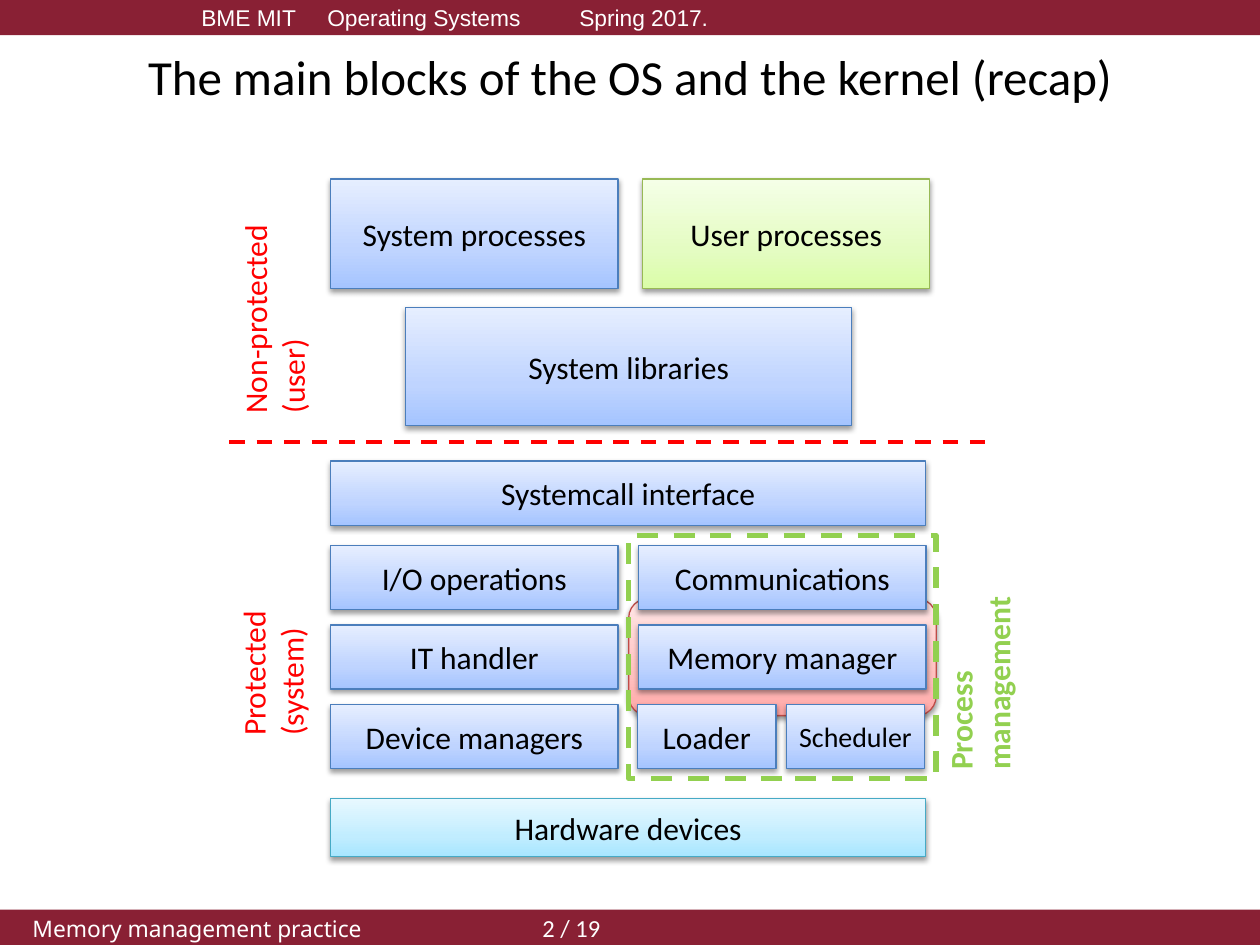
from copy import deepcopy
from dataclasses import dataclass

from lxml import etree
from pptx import Presentation
from pptx import util as u
from pptx.dml.color import RGBColor
from pptx.enum import dml, shapes, text
from pptx.oxml.ns import qn

COLUMNS, ROWS = 100, 75


@dataclass(frozen=True)
class Theme:
    font: str = "Calibri"
    bar: str = "892034"
    ink: str = "000000"
    paper: str = "FFFFFF"
    mode: str = "FF0000"
    process: str = "92D050"
    title_size: int = 28
    label_size: int = 18
    small_size: int = 16
    page_size: int = 14
    bar_size: int = 13
    # Each tint: gradient from bottom to top, then outline
    system: tuple = ("A4C4FF", "BFD4FF", "E6EEFF", "4B7EBC")
    user: tuple = ("DAFDA7", "E4FCC2", "F5FFE7", "98B955")
    hardware: tuple = ("A7E6FF", "C1EDFF", "E7F8FF", "46AAC5")
    memory: tuple = ("FFA6A5", "FFC0BF", "FFE7E7", "BF4C48")


class Diagram:
    """Draws on one slide; places are (left, top, width, height) in grid cells."""

    def __init__(self, deck, theme):
        self.theme = theme
        self.slide = deck.slides.add_slide(deck.slide_layouts[6])
        self.column = deck.slide_width / COLUMNS
        self.row = deck.slide_height / ROWS

    def cells(self, *place):
        return [round(length * (self.row if i % 2 else self.column))
                for i, length in enumerate(place)]

    def style(self, font, size, color, name=None, bold=False):
        font.name, font.size, font.bold = name or self.theme.font, u.Pt(size), bold
        font.color.rgb = RGBColor.from_string(color)

    def outline(self, line, color, width, dashed=False):
        line.color.rgb = RGBColor.from_string(color)
        line.width = u.Pt(width)
        if dashed:
            line.dash_style = dml.MSO_LINE.DASH

    def shape(self, place, kind=shapes.MSO_SHAPE.RECTANGLE):
        shape = self.slide.shapes.add_shape(kind, *self.cells(*place))
        shape.shadow.inherit = False
        return shape

    def bar(self, top, indent, label, name, page=None):
        bar = self.shape((0, top, COLUMNS, 2.8))
        bar.fill.solid()
        bar.fill.fore_color.rgb = RGBColor.from_string(self.theme.bar)
        bar.line.fill.background()
        bar.text_frame.vertical_anchor = text.MSO_ANCHOR.MIDDLE
        line = bar.text_frame.paragraphs[0]
        line.alignment = text.PP_ALIGN.LEFT
        properties = line._p.get_or_add_pPr()
        properties.set("marL", str(u.Inches(indent)))
        properties.set("indent", "0")
        properties.set("defTabSz", str(u.Inches(1)))
        run = line.add_run()
        run.text = label
        self.style(run.font, self.theme.bar_size, self.theme.paper, name)
        if page:
            number = line.add_run()
            number.text = page
            self.style(number.font, self.theme.page_size, self.theme.paper)

    def block(self, place, label, tint, size=None, kind=shapes.MSO_SHAPE.RECTANGLE):
        block = self.shape(place, kind)
        *stops, edge = tint
        block.fill.gradient()
        block.fill.gradient_angle = 90
        stop_list = block._element.spPr.find(qn("a:gradFill")).find(qn("a:gsLst"))
        stop_list.append(deepcopy(stop_list[-1]))
        for stop, color, position in zip(block.fill.gradient_stops, stops, (0, 0.35, 1)):
            stop.color.rgb = RGBColor.from_string(color)
            stop.position = position
        self.outline(block.line, edge, 0.75)
        self.cast_shadow(block)
        if label:
            frame = block.text_frame
            frame.word_wrap = True
            frame.vertical_anchor = text.MSO_ANCHOR.MIDDLE
            frame.margin_left = frame.margin_right = u.Inches(0.05)
            frame.text = label
            frame.paragraphs[0].alignment = text.PP_ALIGN.CENTER
            self.style(frame.paragraphs[0].font, size or self.theme.label_size, self.theme.ink)

    def cast_shadow(self, shape):
        effects = shape._element.spPr.find(qn("a:effectLst"))
        shadow = etree.SubElement(effects, qn("a:outerShdw"), blurRad=str(u.Pt(3.1)),
                                  dist=str(u.Pt(1.6)), dir="5400000", rotWithShape="0")
        color = etree.SubElement(shadow, qn("a:srgbClr"), val=self.theme.ink)
        etree.SubElement(color, qn("a:alpha"), val="38000")

    def title(self, place, label):
        frame = self.slide.shapes.add_textbox(*self.cells(*place)).text_frame
        frame.word_wrap = True
        frame.vertical_anchor = text.MSO_ANCHOR.MIDDLE
        frame.text = label
        frame.paragraphs[0].alignment = text.PP_ALIGN.CENTER
        self.style(frame.paragraphs[0].font, self.theme.title_size, self.theme.ink)

    def side_label(self, place, label, color, bold=False, wrap=True):
        """Text that reads upwards."""
        frame = self.slide.shapes.add_textbox(*self.cells(*place)).text_frame
        frame.word_wrap = wrap
        frame.auto_size = text.MSO_AUTO_SIZE.SHAPE_TO_FIT_TEXT
        frame._txBody.bodyPr.set("vert", "vert270")
        frame.text = label
        for line in frame.paragraphs:
            self.style(line.font, self.theme.label_size, color, bold=bold)

    def boundary(self, left, right, top):
        boundary = self.slide.shapes.add_connector(
            shapes.MSO_CONNECTOR.STRAIGHT, *self.cells(left, top, right, top))
        self.outline(boundary.line, self.theme.mode, 2.25, dashed=True)
        etree.SubElement(boundary._element.spPr, qn("a:effectLst"))

    def group_frame(self, place):
        frame = self.shape(place)
        frame.fill.background()
        self.outline(frame.line, self.theme.process, 3, dashed=True)


def main():
    deck = Presentation()
    deck.slide_width, deck.slide_height = u.Inches(10), u.Inches(7.5)
    theme = Theme()
    diagram = Diagram(deck, theme)

    diagram.bar(0, 1.5, "BME MIT\tOperating Systems\tSpring 2017.", "Arial")
    diagram.bar(72.2, 0.16, "Memory management practice\t\t ", "Noto Sans", "2 / 19")
    diagram.title((5, 3, 90, 6.1), "The main blocks of the OS and the kernel (recap)")

    left, right, half, full = 26.25, 50.7, 22.8, 47.2
    diagram.block((49.9, 47.5, 24.4, 9.3), "", theme.memory,
                  kind=shapes.MSO_SHAPE.ROUNDED_RECTANGLE)
    diagram.block((left, 63.4, full, 4.6), "Hardware devices", theme.hardware)
    diagram.block((32.2, 24.4, 35.4, 9.4), "System libraries", theme.system)
    diagram.block((left, 14.2, half, 8.7), "System processes", theme.system)
    diagram.block((51, 14.2, half, 8.7), "User processes", theme.user)
    diagram.block((left, 36.6, full, 5.1), "Systemcall interface", theme.system)

    kernel_top, pitch, height = 43.3, 6.3, 5.1
    kernel = [("I/O operations", "Communications"),
              ("IT handler", "Memory manager"),
              ("Device managers",)]
    for level, labels in enumerate(kernel):
        for x, label in zip((left, right), labels):
            diagram.block((x, kernel_top + level * pitch, half, height), label, theme.system)
    for x, label, size in ((50.6, "Loader", theme.label_size),
                           (62.4, "Scheduler", theme.small_size)):
        diagram.block((x, kernel_top + 2 * pitch, 11, height), label, theme.system, size)

    diagram.boundary(18.2, 78.2, 35.1)
    diagram.side_label((18.2, 17.7, 8.1, 16.1), "Non-protected\n(user)", theme.mode, wrap=False)
    diagram.side_label((18.1, 46.8, 8.1, 12.6), "Protected\n(system)", theme.mode)
    diagram.group_frame((49.9, 42.5, 24.4, 19.3))
    diagram.side_label((74.2, 45.8, 8.1, 16.3), "Process management", theme.process, bold=True)

    deck.save("out.pptx")


if __name__ == "__main__":
    main()
